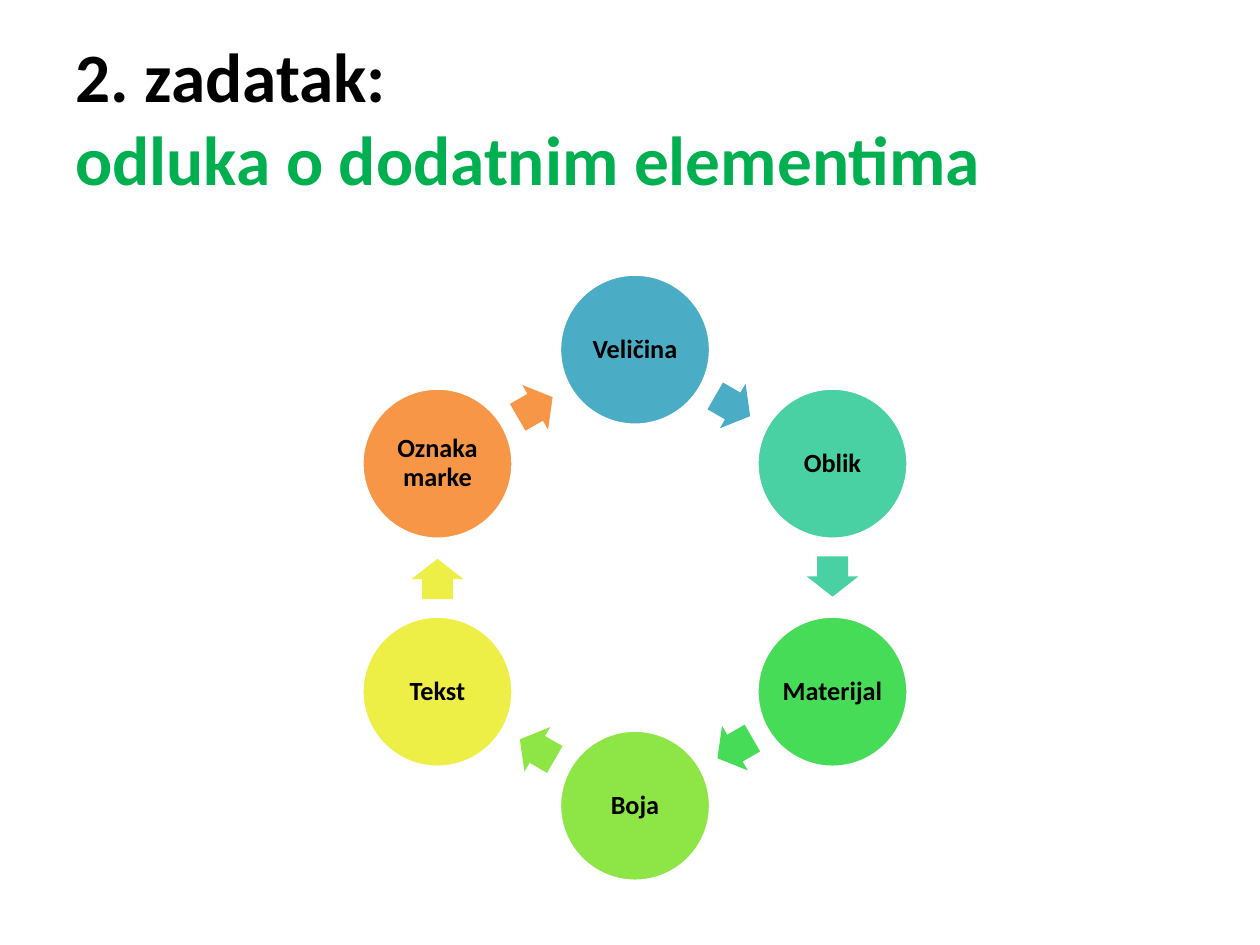
from math import cos, radians, sin

from pptx import Presentation
from pptx.dml.color import RGBColor
from pptx.enum.shapes import MSO_SHAPE as Shape
from pptx.enum.text import MSO_ANCHOR as Anchor, PP_ALIGN as Align
from pptx.util import Inches, Pt

COLORS = {
    "text": "000000", "accent": "00B050", "outline": "FFFFFF",
    "blue": "4BACC6", "teal": "49D1A3", "green": "47DC57",
    "lime": "8DE646", "yellow": "EEEF46", "orange": "F79646",
}
STEPS = [
    ("Veličina", "blue"), ("Oblik", "teal"), ("Materijal", "green"),
    ("Boja", "lime"), ("Tekst", "yellow"), ("Oznaka marke", "orange"),
]
COLUMNS, ROWS = 100, 75


class CycleSlide:
    """Draws styled elements on one slide, measured in grid columns and rows."""

    font = "Calibri"
    center = (50.4, 45.85)
    radius = 18.1
    circle_size = 12
    arrow_size = (3.2, 4.1)
    arrow_shift = -0.1

    def __init__(self, prs):
        self.s = prs.slides.add_slide(prs.slide_layouts[6])
        self.col = prs.slide_width / COLUMNS
        self.row = prs.slide_height / ROWS

    def box(self, x, y, w, h):
        return (round(x * self.col), round(y * self.row),
                round(w * self.col), round(h * self.row))

    def style(self, r, size, color):
        r.font.name, r.font.size, r.font.bold = self.font, Pt(size), True
        r.font.color.rgb = RGBColor.from_string(COLORS[color])

    def shape(self, kind, x, y, w, h, color):
        sp = self.s.shapes.add_shape(kind, *self.box(x - w / 2, y - h / 2, w, h))
        sp.shadow.inherit = False
        sp.fill.solid()
        sp.fill.fore_color.rgb = RGBColor.from_string(COLORS[color])
        return sp

    def title(self, lines, colors):
        tf = self.s.shapes.add_textbox(*self.box(5, 3, 90, 12.5)).text_frame
        tf.word_wrap, tf.vertical_anchor = True, Anchor.MIDDLE
        tf.text = "\v".join(lines)
        for r, color in zip(tf.paragraphs[0].runs, colors):
            self.style(r, 39.6, color)

    def circle(self, x, y, text, color):
        sp = self.shape(Shape.OVAL, x, y, self.circle_size, self.circle_size, color)
        sp.line.color.rgb = RGBColor.from_string(COLORS["outline"])
        sp.line.width = Pt(2)
        tf = sp.text_frame
        tf.word_wrap, tf.vertical_anchor = True, Anchor.MIDDLE
        tf.margin_left = tf.margin_right = Inches(0.02)
        tf.margin_top = tf.margin_bottom = Inches(0.02)
        tf.text = text
        p = tf.paragraphs[0]
        p.alignment, p.line_spacing = Align.CENTER, 0.9
        self.style(p.runs[0], 15, "text")

    def arrow(self, x, y, rotation, color):
        sp = self.shape(Shape.RIGHT_ARROW, x, y, *self.arrow_size, color)
        sp.adjustments[0], sp.adjustments[1] = 0.6, 0.5
        sp.line.fill.background()
        sp.rotation = rotation

    def cycle(self, steps):
        cx, cy = self.center
        turn = 360 / len(steps)
        middle = self.radius * cos(radians(turn / 2))
        for i, (text, color) in enumerate(steps):
            angle = radians(i * turn - 90)
            self.circle(cx + self.radius * cos(angle),
                        cy + self.radius * sin(angle), text, color)
            rotation = (i + 0.5) * turn
            a = radians(rotation)
            self.arrow(cx + middle * sin(a) + self.arrow_shift * cos(a),
                       cy - middle * cos(a) + self.arrow_shift * sin(a),
                       rotation, color)


def main():
    prs = Presentation()
    prs.slide_width, prs.slide_height = Inches(10), Inches(7.5)
    slide = CycleSlide(prs)
    slide.title(["2. zadatak: ", "odluka o dodatnim elementima"], ["text", "accent"])
    slide.cycle(STEPS)
    prs.save("out.pptx")


if __name__ == "__main__":
    main()
